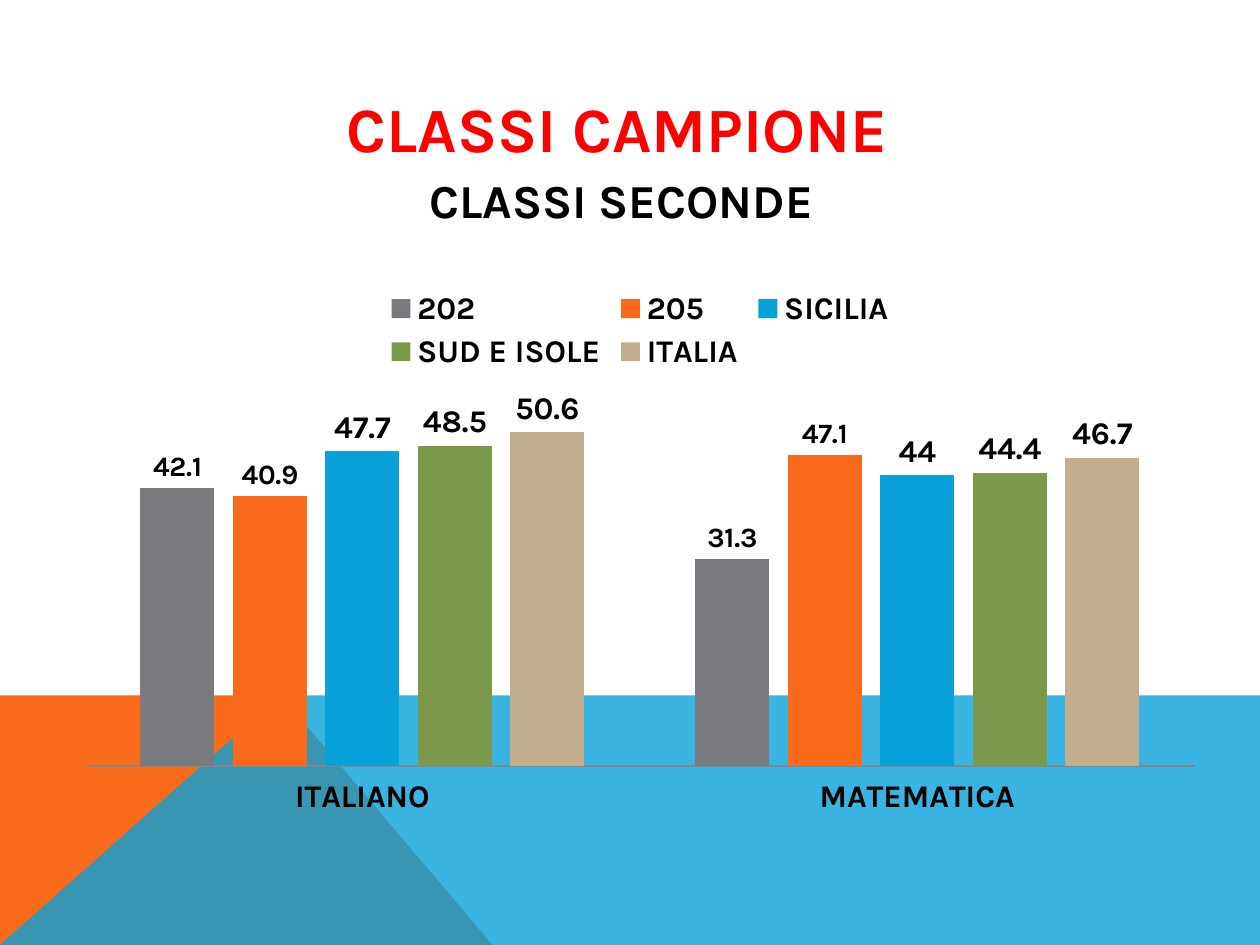
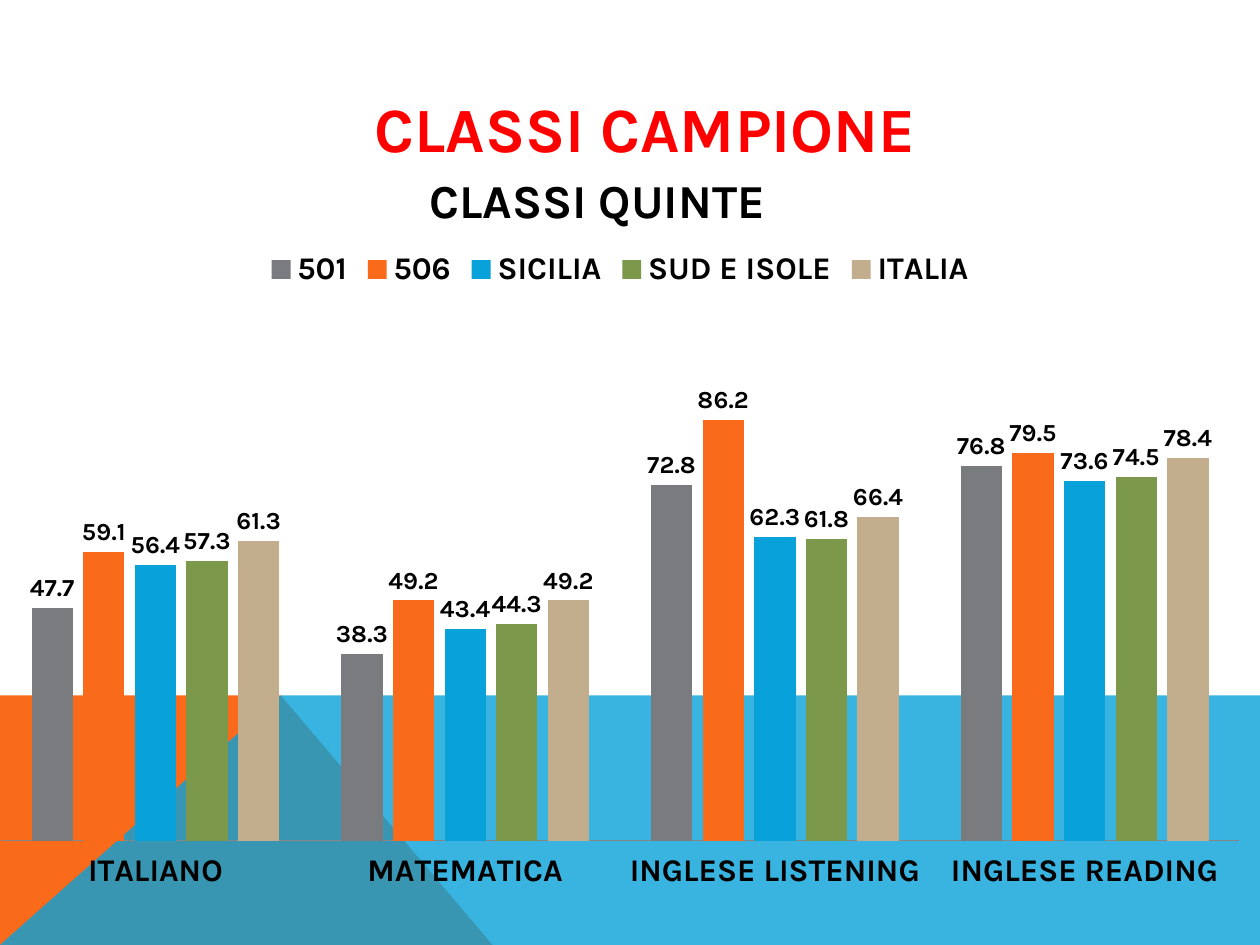
from lxml import etree
from pptx import Presentation
from pptx.chart.data import CategoryChartData
from pptx.dml.color import RGBColor
from pptx.enum.chart import XL_CHART_TYPE as ChartType
from pptx.enum.chart import XL_LABEL_POSITION as LabelPos
from pptx.enum.chart import XL_LEGEND_POSITION as LegendPos
from pptx.enum.chart import XL_TICK_LABEL_POSITION as TickLabelPos
from pptx.enum.chart import XL_TICK_MARK as TickMark
from pptx.enum.text import MSO_ANCHOR as Anchor
from pptx.oxml import parse_xml
from pptx.oxml.ns import nsdecls, qn
from pptx.util import Cm, Pt

BLACK = RGBColor(0x00, 0x00, 0x00)
RED = RGBColor(0xFF, 0x00, 0x00)
GREY = RGBColor(0x79, 0x7B, 0x7E)
ORANGE = RGBColor(0xF9, 0x6A, 0x1B)
BLUE = RGBColor(0x08, 0xA1, 0xD9)
GREEN = RGBColor(0x7C, 0x98, 0x4A)
SAND = RGBColor(0xC2, 0xAD, 0x8D)
AXIS_GREY = RGBColor(0x86, 0x86, 0x86)

FONT = "Karla"
SERIES_COLORS = (GREY, ORANGE, BLUE, GREEN, SAND)
WIDTH, HEIGHT = 25.4, 19.05
BAND_TOP, BAND_PEAK, BAND_FOOT = 14.02, 5.66, 9.93
PLOT_LAYOUT = {"x": 0, "y": 0.165, "w": 1, "h": 0.688}


def set_attrs(target, **values):
    for name, value in values.items():
        setattr(target, name, value)


class Deck:
    """Holds the shared style and the slide being built."""

    def __init__(self):
        self.prs = Presentation()
        set_attrs(self.prs, slide_width=Cm(WIDTH), slide_height=Cm(HEIGHT))
        self.s = None

    def new_slide(self):
        self.s = self.prs.slides.add_slide(self.prs.slide_layouts[6])
        self.polygon([(0, HEIGHT), (0, BAND_TOP), (BAND_PEAK, BAND_TOP),
                      (BAND_FOOT, HEIGHT)], ORANGE)
        self.polygon([(0, HEIGHT), (BAND_PEAK, BAND_TOP), (WIDTH, BAND_TOP),
                      (WIDTH, HEIGHT)], BLUE, alpha=80)

    def style(self, font, size, color=BLACK, bold=True):
        set_attrs(font, name=FONT, size=Pt(size), bold=bold)
        font.color.rgb = color

    def polygon(self, points, color, alpha=100):
        corners = [(Cm(x), Cm(y)) for x, y in points]
        builder = self.s.shapes.build_freeform(*corners[0])
        builder.add_line_segments(corners[1:], close=True)
        sp = builder.convert_to_shape()
        sp.shadow.inherit = False
        sp.line.fill.background()
        sp.fill.solid()
        sp.fill.fore_color.rgb = color
        if alpha < 100:
            clr = sp.fill._xPr.find(".//" + qn("a:srgbClr"))
            etree.SubElement(clr, qn("a:alpha")).set("val", str(alpha * 1000))

    def title(self, lines):
        """Each line is (text, size, colour, left indent in cm)."""
        box = self.s.shapes.add_textbox(Cm(1.27), Cm(1), Cm(22.86), Cm(4.4))
        tf = box.text_frame
        set_attrs(tf, word_wrap=True, vertical_anchor=Anchor.MIDDLE)
        for i, (text, size, color, indent) in enumerate(lines):
            p = tf.add_paragraph() if i else tf.paragraphs[0]
            p._p.get_or_add_pPr().set("marL", str(Cm(indent)))
            if i:
                p.space_before = Pt(4)
            r = p.add_run()
            r.text = text
            self.style(r.font, size, color)

    def column_chart(self, box, cats, series, top_value, label_sizes):
        data = CategoryChartData()
        data.categories = cats
        for name, values in series.items():
            data.add_series(name, values)
        frame = self.s.shapes.add_chart(
            ChartType.COLUMN_CLUSTERED, *map(Cm, box), data)
        chart = frame.chart
        set_attrs(chart, has_title=False, has_legend=True)
        self.style(chart.font, 18, bold=False)
        set_attrs(chart.legend, position=LegendPos.TOP, include_in_layout=False)
        self.style(chart.legend.font, 18)

        set_attrs(chart.value_axis, visible=False, has_major_gridlines=False,
                  minimum_scale=0, maximum_scale=top_value)
        axis = chart.category_axis
        set_attrs(axis, major_tick_mark=TickMark.NONE,
                  minor_tick_mark=TickMark.NONE,
                  tick_label_position=TickLabelPos.LOW)
        self.style(axis.tick_labels.font, 18)
        axis.format.line.color.rgb = AXIS_GREY
        axis.format.line.width = Pt(0.75)

        plot = chart.plots[0]
        set_attrs(plot, gap_width=150, overlap=-25, vary_by_categories=False)
        for ser, color, size in zip(plot.series, SERIES_COLORS, label_sizes):
            ser.format.fill.solid()
            ser.format.fill.fore_color.rgb = color
            labels = ser.data_labels
            set_attrs(labels, show_value=True, position=LabelPos.OUTSIDE_END)
            self.style(labels.font, size)
        self.fix_plot_area(chart)

    def fix_plot_area(self, chart):
        area = chart._chartSpace.find(".//" + qn("c:plotArea"))
        for old in area.findall(qn("c:layout")):
            area.remove(old)
        sizes = "".join(f'<c:{k} val="{v}"/>' for k, v in PLOT_LAYOUT.items())
        area.insert(0, parse_xml(
            f'<c:layout {nsdecls("c")}><c:manualLayout>'
            '<c:layoutTarget val="inner"/>'
            '<c:xMode val="edge"/><c:yMode val="edge"/>'
            f'{sizes}</c:manualLayout></c:layout>'))


def main():
    deck = Deck()

    deck.new_slide()
    deck.title([("CLASSI CAMPIONE", 36, RED, 5.47),
                ("CLASSI SECONDE", 27, BLACK, 7.14)])
    deck.column_chart(
        (1.7, 5.54, 22.4, 11.61),
        ["ITALIANO", "MATEMATICA"],
        {"202": (42.1, 31.3),
         "205": (40.9, 47.1),
         "SICILIA": (47.7, 44),
         "SUD E ISOLE": (48.5, 44.4),
         "ITALIA": (50.6, 46.7)},
        top_value=60, label_sizes=(16, 16, 18, 18, 18))

    deck.new_slide()
    deck.title([("CLASSI CAMPIONE", 36, RED, 6.04),
                ("CLASSI QUINTE", 27, BLACK, 7.14)])
    deck.column_chart(
        (0, 4.75, 25, 14.3),
        ["ITALIANO", "MATEMATICA", "INGLESE LISTENING", "INGLESE READING"],
        {"501": (47.7, 38.3, 72.8, 76.8),
         "506": (59.1, 49.2, 86.2, 79.5),
         "SICILIA": (56.4, 43.4, 62.3, 73.6),
         "SUD E ISOLE": (57.3, 44.3, 61.8, 74.5),
         "ITALIA": (61.3, 49.2, 66.4, 78.4)},
        top_value=100, label_sizes=(14,) * 5)

    deck.prs.save("out.pptx")


if __name__ == "__main__":
    main()
